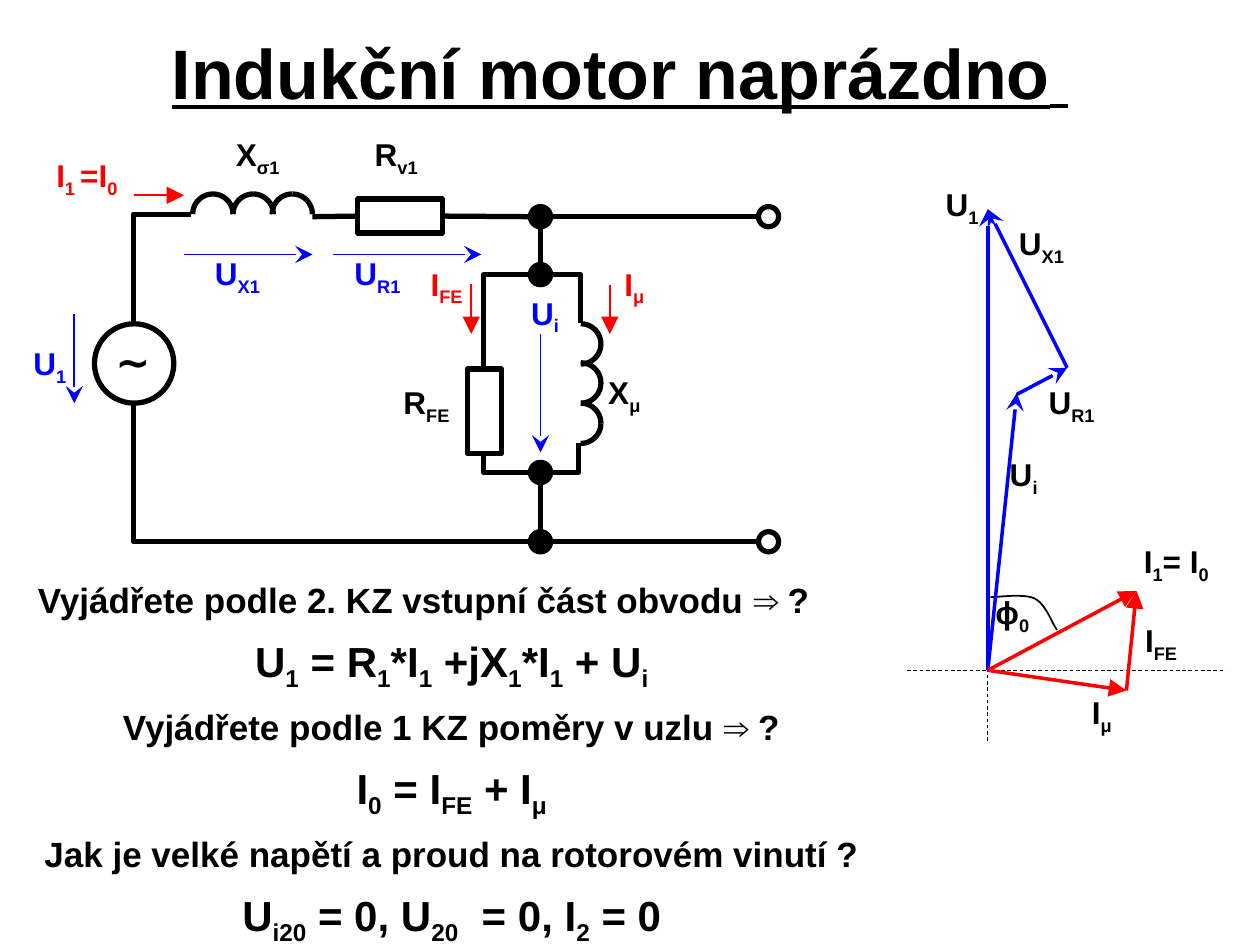
from math import cos, radians, sin

from lxml import etree
from pptx import Presentation
from pptx.dml.color import RGBColor
from pptx.enum.dml import MSO_LINE
from pptx.enum.shapes import MSO_CONNECTOR as Connector, MSO_SHAPE as Shape
from pptx.enum.text import MSO_ANCHOR as Anchor, MSO_AUTO_SIZE as AutoSize, PP_ALIGN as Align
from pptx.oxml.ns import qn
from pptx.util import Inches, Pt

BLACK = RGBColor(0, 0, 0)
RED = RGBColor(0xFF, 0, 0)
BLUE = RGBColor(0, 0, 0xFF)


def write(paragraph, text, size=18, color=BLACK, align=Align.CENTER, before=0,
          font="Arial", bold=True, underline=None):
    """Write text into a paragraph; parts in braces become subscripts."""
    paragraph.alignment = align
    paragraph.space_before = Pt(before)
    for index, part in enumerate(text.replace("}", "{").split("{")):
        if not part:
            continue
        run = paragraph.add_run()
        run.text = part
        run.font.name, run.font.size = font, Pt(size)
        run.font.bold, run.font.underline = bold, underline
        run.font.color.rgb = color
        if index % 2:
            run.font._element.set("baseline", "-25000")


def add_line(x1, y1, x2, y2, color=BLACK, width=3, head=None, dash=None, bent=False):
    """Add a line; a bent one runs horizontally first, then vertically."""
    line = slide.shapes.add_connector(
        Connector.ELBOW if bent else Connector.STRAIGHT,
        Inches(x1), Inches(y1), Inches(x2), Inches(y2))
    line.line.color.rgb, line.line.width = color, Pt(width)
    properties = line.element.spPr
    if bent:
        properties.find(qn("a:prstGeom")).set("prst", "bentConnector2")
    if dash:
        line.line.dash_style = dash
    if head:
        etree.SubElement(line.line._get_or_add_ln(), qn("a:tailEnd"),
                         type=head, w="lg", len="lg")
    etree.SubElement(properties, qn("a:effectLst"))
    return line


presentation = Presentation()
presentation.slide_width, presentation.slide_height = Inches(10), Inches(7.5)
slide = presentation.slides.add_slide(presentation.slide_layouts[1])

# Title
title = slide.shapes.title
title.left, title.top, title.width, title.height = map(Inches, (1.22, 0.13, 7.4, 0.87))
title.text_frame.vertical_anchor = Anchor.MIDDLE
title.text_frame.auto_size = AutoSize.NONE
heading = title.text_frame.paragraphs[0]
write(heading, "Indukční motor naprázdno", size=40, underline=True)
write(heading, " ", size=40, underline=True, font="Montserrat", bold=False)

# Questions and their equations
body = slide.placeholders[1]
body.left, body.top, body.width, body.height = map(Inches, (0.2, 4.54, 6.77, 2.86))
body.text_frame.auto_size = AutoSize.SHAPE_TO_FIT_TEXT
body_lines = [
    ("Vyjádřete podle 2. KZ vstupní část obvodu ⇒ ?", 20, Align.LEFT, 0),
    ("U{1} = R{1}*I{1} +jX{1}*I{1} + U{i}", 24, Align.CENTER, 8.6),
    ("Vyjádřete podle 1 KZ poměry v uzlu ⇒ ?", 20, Align.CENTER, 7.2),
    ("I{0} = I{FE} + I{μ}", 24, Align.CENTER, 8.6),
    ("Jak je velké napětí a proud na rotorovém vinutí ?", 20, Align.CENTER, 7.2),
    ("U{i20} = 0, U{20}  = 0, I{2} = 0", 24, Align.CENTER, 8.6),
]
for index, (text, size, align, before) in enumerate(body_lines):
    frame = body.text_frame
    paragraph = frame.add_paragraph() if index else frame.paragraphs[0]
    write(paragraph, text, size=size, align=align, before=before)
    paragraph_properties = paragraph._p.get_or_add_pPr()
    paragraph_properties.set("marL", "0")
    paragraph_properties.set("indent", "0")
    etree.SubElement(paragraph_properties, qn("a:buNone"))

# Resistors, source, nodes and open terminals
parts = [
    (Shape.RECTANGLE, 2.84, 1.58, 0.67, 0.27, False),
    (Shape.RECTANGLE, 3.71, 2.93, 0.27, 0.67, False),
    (Shape.OVAL, 0.75, 2.57, 0.63, 0.63, False),
]
parts += [(Shape.OVAL, 4.21, top, 0.16, 0.16, True) for top in (1.64, 2.1, 3.67, 4.22)]
parts += [(Shape.OVAL, 6.02, top, 0.16, 0.16, False) for top in (1.64, 4.22)]
drawn_parts = []
for kind, left, top, width, height, filled in parts:
    shape = slide.shapes.add_shape(kind, *map(Inches, (left, top, width, height)))
    shape.shadow.inherit = False
    if filled:
        shape.fill.solid()
        shape.fill.fore_color.rgb = BLACK
    else:
        shape.fill.background()
    shape.line.color.rgb, shape.line.width = BLACK, Pt(3)
    drawn_parts.append(shape)
series_resistor = drawn_parts[0]

# Wires
for points in [(4.29, 1.8, 4.29, 2.1), (4.29, 3.83, 4.29, 4.22),
               (6.01, 1.72, 4.37, 1.72), (4.37, 4.3, 6.01, 4.3)]:
    add_line(*points)
for points in [(4.21, 2.18, 3.84, 2.91), (4.37, 2.18, 4.61, 2.56),
               (4.21, 3.75, 3.84, 3.61), (4.37, 3.75, 4.59, 3.52),
               (4.21, 4.3, 1.06, 3.21), (1.52, 1.7, 1.06, 2.56)]:
    add_line(*points, bent=True)
add_line(2.84, 1.72, 2.48, 1.72).begin_connect(series_resistor, 1)
add_line(3.51, 1.72, 4.21, 1.72).begin_connect(series_resistor, 3)

# Coils as quarter arcs, and the phase angle as a curve
radius = 0.16
quarters = [(x, 1.7, start) for x in (1.69, 2.01, 2.32) for start in (180, 270)]
quarters += [(4.61, y, start) for y in (2.73, 3.04, 3.36) for start in (270, 360)]
curves = [([(x + radius * cos(radians(start + step)), y + radius * sin(radians(start + step)))
            for step in range(0, 91, 6)], 3) for x, y, start in quarters]
angle_points = []
for bezier in [((7.86, 4.74), (7.92, 4.74), (8.13, 4.71), (8.21, 4.75)),
               ((8.21, 4.75), (8.3, 4.79), (8.35, 4.95), (8.39, 5))]:
    for step in range(13):
        t = step / 12
        weights = ((1 - t) ** 3, 3 * t * (1 - t) ** 2, 3 * t ** 2 * (1 - t), t ** 3)
        angle_points.append(tuple(sum(weight * point[axis] for weight, point in
                                      zip(weights, bezier)) for axis in (0, 1)))
curves.append((angle_points, 1))
for points, width in curves:
    points = [(Inches(x), Inches(y)) for x, y in points]
    builder = slide.shapes.build_freeform(*points[0])
    builder.add_line_segments(points[1:], close=False)
    curve = builder.convert_to_shape()
    curve.shadow.inherit = False
    curve.fill.background()
    curve.line.color.rgb, curve.line.width = BLACK, Pt(width)

# Voltage and current arrows in the circuit
for points in [(0.59, 2.49, 0.59, 3.2), (4.29, 2.65, 4.29, 3.59),
               (2.64, 2.02, 3.82, 2.02), (1.46, 2.02, 2.48, 2.02)]:
    add_line(*points, color=BLUE, width=1, head="stealth")
for points in [(1.06, 1.55, 1.46, 1.55), (3.74, 2.25, 3.74, 2.65),
               (4.84, 2.26, 4.84, 2.65)]:
    add_line(*points, color=RED, width=1, head="triangle")

# Phasor diagram: axes, voltages, currents
for points in [(7.2, 5.32, 9.73, 5.32), (7.84, 2.33, 7.84, 5.88)]:
    add_line(*points, width=0.5, dash=MSO_LINE.DASH)
for points in [(7.84, 5.32, 8.07, 3.12), (8.47, 2.92, 7.84, 1.66),
               (8.07, 3.13, 8.47, 2.92), (7.84, 5.32, 7.84, 1.66)]:
    add_line(*points, color=BLUE, width=2, head="stealth")
for points in [(7.84, 5.32, 8.94, 5.48), (8.94, 5.48, 9.02, 4.69),
               (7.84, 5.32, 9.02, 4.69)]:
    add_line(*points, color=RED, width=2, head="triangle")

# Labels: text, left, top, width, colour, size
labels = [
    ("U{1}", 0.2, 2.73, 0.39, BLUE, 18), ("U{i}", 4.13, 2.33, 0.39, BLUE, 18),
    ("U{R1}", 2.72, 2.02, 0.55, BLUE, 18), ("U{X1}", 1.61, 2.02, 0.55, BLUE, 18),
    ("I{1 }=I{0}", 0.16, 1.24, 1.06, RED, 18),
    ("I{μ}", 4.76, 2.1, 0.55, RED, 18), ("I{FE}", 3.27, 2.1, 0.55, RED, 18),
    ("X{σ1}", 1.77, 1.07, 0.55, BLACK, 18), ("R{v1}", 2.87, 1.07, 0.55, BLACK, 18),
    ("R{FE}", 3.11, 3.04, 0.55, BLACK, 18), ("X{μ}", 4.68, 2.96, 0.55, BLACK, 18),
    ("∼", 0.82, 2.66, 0.47, BLACK, 24),
    ("U{1}", 7.44, 1.47, 0.39, BLACK, 18), ("U{X1}", 7.99, 1.78, 0.55, BLACK, 18),
    ("U{R1}", 8.23, 3.04, 0.55, BLACK, 18), ("U{i }", 7.91, 3.61, 0.47, BLACK, 18),
    ("I{1}= I{0}", 8.94, 4.3, 0.79, BLACK, 18), ("I{FE}", 8.94, 4.93, 0.55, BLACK, 18),
    ("I{μ}", 8.47, 5.5, 0.55, BLACK, 18), ("ϕ{0}", 7.76, 4.71, 0.55, BLACK, 18),
]
for text, left, top, width, color, size in labels:
    box = slide.shapes.add_textbox(*map(Inches, (left, top, width, size / 60)))
    frame = box.text_frame
    frame.word_wrap = True
    frame.auto_size = AutoSize.SHAPE_TO_FIT_TEXT
    frame.margin_left = frame.margin_right = frame.margin_top = frame.margin_bottom = 0
    write(frame.paragraphs[0], text, size=size, color=color)

presentation.save("out.pptx")
